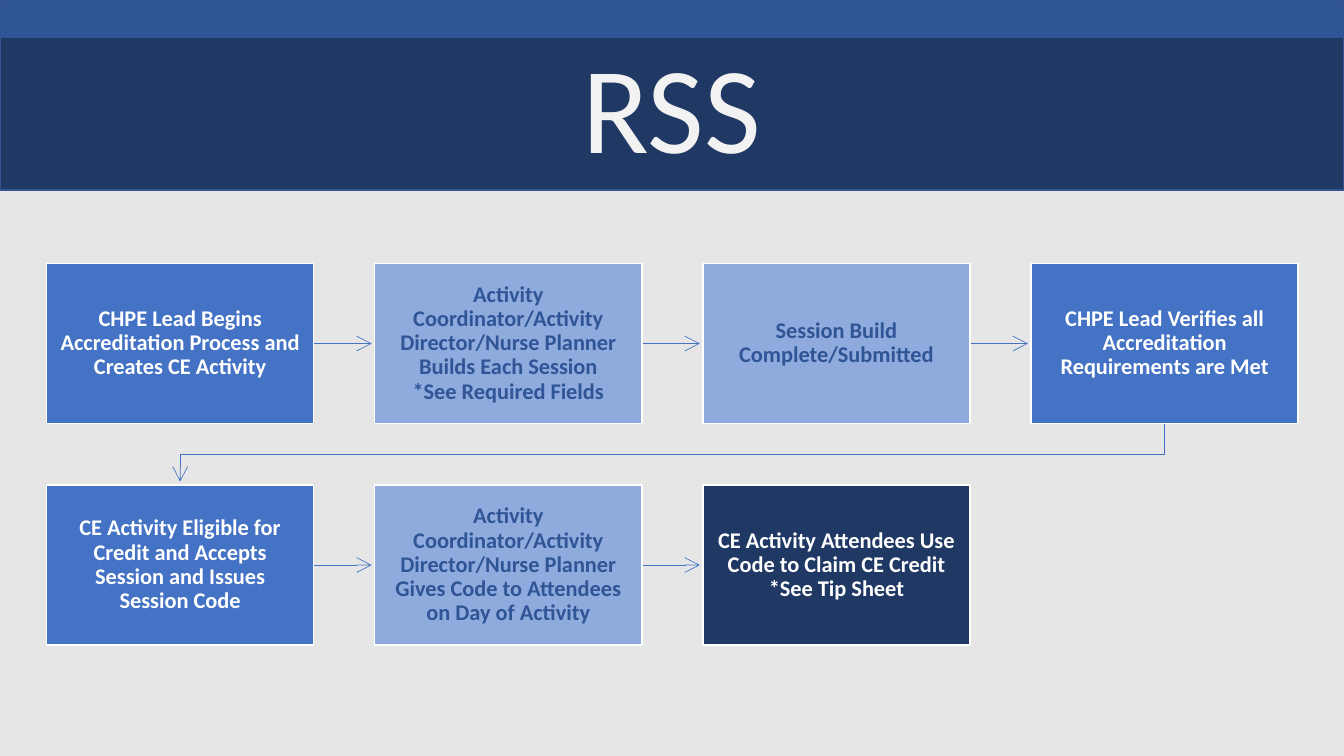
"""Build the RSS accreditation workflow slide."""
from dataclasses import dataclass

from pptx import Presentation
from pptx.dml.color import RGBColor
from pptx.enum import shapes, text
from pptx.oxml import ns, xmlchemy as xml
from pptx.util import Pt

WIDE, HIGH = 960, 540
LEFT, TOP = 33.3, 188.2
BOX_W, BOX_H = 190.8, 114.4
STEP_X, STEP_Y = 234.4, 158.2
REACH = 41.4
BLUE, PALE, NAVY, MID, EDGE = "4472C4", "8FAADC", "203864", "2F5597", "325491"
WHITE = "FFFFFF"


@dataclass
class Stage:
    """A step of the workflow."""
    row: int
    col: int
    lines: tuple[str, ...]
    fill: str
    ink: str = WHITE
    arrow: bool = True

    @property
    def x(self) -> float:
        return LEFT + self.col * STEP_X

    @property
    def y(self) -> float:
        return TOP + self.row * STEP_Y


@dataclass
class Band:
    """A full-width header strip."""
    top: float
    high: float
    fill: str


STAGES = [
    Stage(0, 0, ("CHPE Lead Begins Accreditation Process and Creates CE Activity",), BLUE),
    Stage(0, 1, ("Activity Coordinator/Activity Director/Nurse Planner Builds Each Session",
                 "*See Required Fields"), PALE, MID),
    Stage(0, 2, ("Session Build Complete/Submitted",), PALE, MID),
    Stage(0, 3, ("CHPE Lead Verifies all Accreditation Requirements are Met",), BLUE,
          arrow=False),
    Stage(1, 0, ("CE Activity Eligible for Credit and Accepts Session and Issues "
                 "Session Code",), BLUE),
    Stage(1, 1, ("Activity Coordinator/Activity Director/Nurse Planner Gives Code to "
                 "Attendees on Day of Activity",), PALE, MID),
    Stage(1, 2, ("CE Activity Attendees Use Code to Claim CE Credit *See Tip Sheet",),
          NAVY, arrow=False),
]
BANDS = [Band(26.3, 109.4, NAVY), Band(0, 26.6, MID)]


def color(code: str) -> RGBColor:
    return RGBColor.from_string(code)


def write(shape, lines: tuple[str, ...], size: float, ink: str, bold: bool, pad: float) -> None:
    frame = shape.text_frame
    frame.word_wrap = True
    frame.vertical_anchor = text.MSO_ANCHOR.MIDDLE
    frame.margin_left = frame.margin_right = Pt(pad)
    frame.margin_top = frame.margin_bottom = Pt(pad)
    para = frame.paragraphs[0]
    para.alignment = text.PP_ALIGN.CENTER
    para.line_spacing = 0.9
    for i, line in enumerate(lines):
        if i:
            para.add_line_break()
        run = para.add_run()
        run.text = line
        run.font.name = "Calibri"
        run.font.size = Pt(size)
        run.font.bold = bold
        run.font.color.rgb = color(ink)


def block(slide, x: float, y: float, w: float, h: float, fill: str, edge: str):
    shape = slide.shapes.add_shape(shapes.MSO_SHAPE.RECTANGLE, Pt(x), Pt(y), Pt(w), Pt(h))
    shape.shadow.inherit = False
    shape.fill.solid()
    shape.fill.fore_color.rgb = color(fill)
    shape.line.color.rgb = color(edge)
    shape.line.width = Pt(1)
    return shape


def point(shape) -> None:
    shape.line.color.rgb = color(BLUE)
    shape.line.width = Pt(0.5)
    tip = xml.OxmlElement("a:tailEnd")
    tip.set("type", "arrow")
    tip.set("w", "lg")
    tip.set("len", "lg")
    shape.line._get_or_add_ln().append(tip)


def link(slide, stage: Stage) -> None:
    x, y = stage.x + BOX_W, stage.y + BOX_H / 2
    line = slide.shapes.add_connector(
        shapes.MSO_CONNECTOR.STRAIGHT, Pt(x), Pt(y), Pt(x + REACH), Pt(y))
    point(line)
    line._element.find(ns.qn("p:spPr")).append(xml.OxmlElement("a:effectLst"))


def turn(slide, start: Stage, end: Stage) -> None:
    x1, x2 = start.x + BOX_W / 2, end.x + BOX_W / 2
    y1, y2 = start.y + BOX_H, end.y
    mid = (y1 + y2) / 2
    form = slide.shapes.build_freeform(Pt(x1), Pt(y1))
    form.add_line_segments(
        [(Pt(x1), Pt(mid)), (Pt(x2), Pt(mid)), (Pt(x2), Pt(y2 - 2.4))], close=False)
    path = form.convert_to_shape()
    path.shadow.inherit = False
    path.fill.background()
    point(path)


def main() -> None:
    deck = Presentation()
    deck.slide_width, deck.slide_height = Pt(WIDE), Pt(HIGH)
    slide = deck.slides.add_slide(deck.slide_layouts[6])
    slide.background.fill.solid()
    slide.background.fill.fore_color.rgb = color("E7E6E6")
    for stage in STAGES:
        if stage.arrow:
            link(slide, stage)
        shape = block(slide, stage.x, stage.y, BOX_W, BOX_H, stage.fill, WHITE)
        write(shape, stage.lines, 16, stage.ink, True, 8.9)
    turn(slide, STAGES[3], STAGES[4])
    for band in BANDS:
        block(slide, 0, band.top, WIDE, band.high, band.fill, EDGE)
    title = slide.shapes.add_textbox(Pt(0), Pt(16.6), Pt(WIDE), Pt(128.9))
    write(title, ("RSS",), 88, "F2F2F2", False, 3.6)
    deck.save("out.pptx")


if __name__ == "__main__":
    main()
